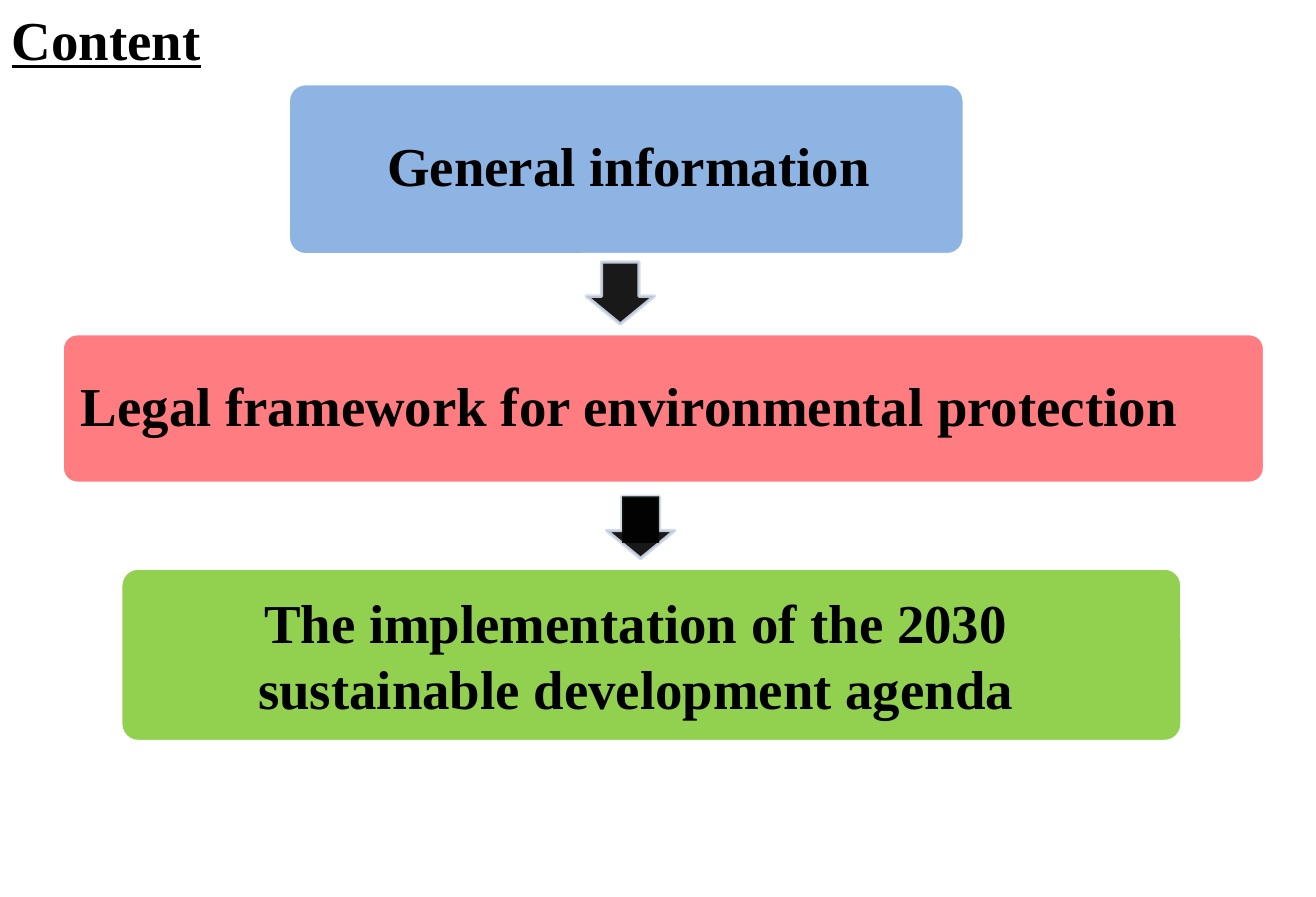
from dataclasses import dataclass

from lxml import etree
from pptx import Presentation
from pptx.dml.color import RGBColor
from pptx.enum import shapes, text
from pptx.oxml.ns import qn
from pptx.util import Inches, Pt


@dataclass(frozen=True)
class Theme:
    font: str = "Times New Roman"
    size: float = 33
    ink: str = "000000"
    outline: str = "FFFFFF"
    arrow_outline: str = "D0D8E8"
    general: str = "8EB4E3"
    legal: str = "FF7C80"
    agenda: str = "92D050"
    arrow_opacity: int = 90


theme = Theme()


def style_paragraph(paragraph, align):
    paragraph.alignment = align
    font = paragraph.font
    font.name, font.size, font.bold = theme.font, Pt(theme.size), True
    font.color.rgb = RGBColor.from_string(theme.ink)


def add_filled(kind, box, fill, outline=None, opacity=100):
    """Add a shadowless preset shape; opacity, in percent, covers fill and line."""
    shape = slide.shapes.add_shape(kind, *map(Inches, box))
    shape.shadow.inherit = False
    shape.fill.solid()
    shape.fill.fore_color.rgb = RGBColor.from_string(fill)
    if outline:
        shape.line.color.rgb = RGBColor.from_string(outline)
        shape.line.width = Pt(2)
    else:
        shape.line.fill.background()
    if opacity < 100:
        for color in shape._element.spPr.iter(qn("a:srgbClr")):
            etree.SubElement(color, qn("a:alpha"), val=str(opacity * 1000))
    return shape


prs = Presentation()
prs.slide_width, prs.slide_height = Inches(11), Inches(7.5)
slide = prs.slides.add_slide(prs.slide_layouts[5])

# Heading
heading = slide.shapes.title
heading.left, heading.top = Inches(0), Inches(0)
heading.width, heading.height = Inches(1.8), Inches(0.66)
frame = heading.text_frame
frame.text = "Content"
frame.word_wrap = False
frame.auto_size = text.MSO_AUTO_SIZE.NONE
frame.vertical_anchor = text.MSO_ANCHOR.TOP
style_paragraph(frame.paragraphs[0], text.PP_ALIGN.LEFT)
frame.paragraphs[0].font.underline = True

# Steps: box, fill, lines, alignment, line spacing, left and right margin
center, left = text.PP_ALIGN.CENTER, text.PP_ALIGN.LEFT
steps = [
    ((2.41, 0.7, 5.65, 1.43), theme.general, ["General information"],
     center, 0.9, 0.16, 0.12),
    ((0.52, 2.79, 10.05, 1.25), theme.legal,
     ["Legal framework for environmental protection"], left, 0.9, 0.12, 0.12),
    ((1.01, 4.75, 8.87, 1.45), theme.agenda,
     ["The implementation of the 2030", "sustainable development agenda"],
     center, 1.0, 0.12, 0.38),
]
for box, fill, lines, align, spacing, margin_left, margin_right in steps:
    step = add_filled(shapes.MSO_SHAPE.ROUNDED_RECTANGLE, box, fill, theme.outline)
    step.adjustments[0] = 0.1
    frame = step.text_frame
    frame.text = "\n".join(lines)
    frame.word_wrap = True
    frame.vertical_anchor = text.MSO_ANCHOR.MIDDLE
    frame.margin_left, frame.margin_right = Inches(margin_left), Inches(margin_right)
    frame.margin_top = frame.margin_bottom = Inches(0.12)
    for paragraph in frame.paragraphs:
        style_paragraph(paragraph, align)
        paragraph.line_spacing = spacing

# Arrows between the steps
for x, y in [(4.9, 2.19), (5.07, 4.15)]:
    arrow = add_filled(shapes.MSO_SHAPE.DOWN_ARROW, (x, y, 0.57, 0.52), theme.ink,
                       theme.arrow_outline, theme.arrow_opacity)
    arrow.adjustments[0], arrow.adjustments[1] = 0.55, 0.45

# Darker shaft on the second arrow
add_filled(shapes.MSO_SHAPE.RECTANGLE, (5.2, 4.15, 0.31, 0.39), theme.ink,
           opacity=theme.arrow_opacity)

prs.save("out.pptx")
